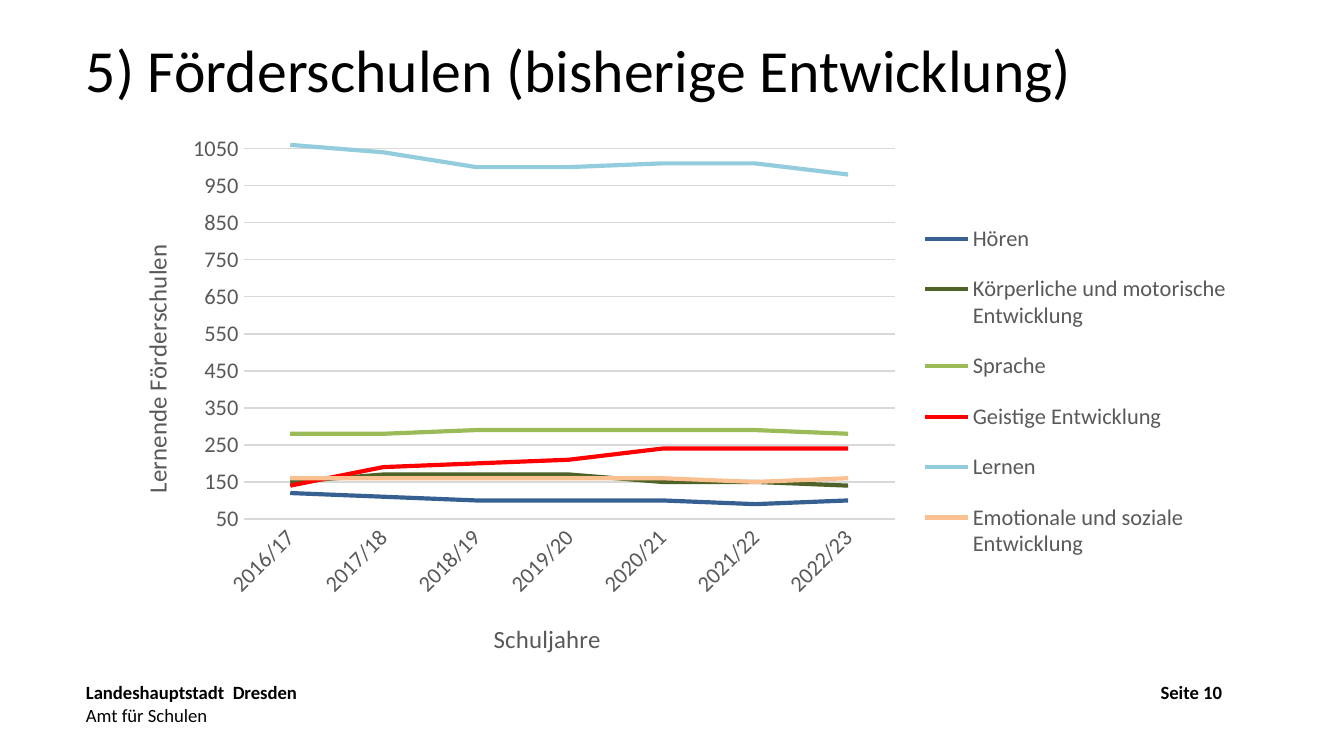
from lxml.etree import SubElement
from pptx import Presentation
from pptx.chart.data import CategoryChartData
from pptx.dml.color import RGBColor
from pptx.enum.chart import XL_CHART_TYPE as ChartType, XL_LEGEND_POSITION as LegendSide
from pptx.enum.chart import XL_MARKER_STYLE as Marker, XL_TICK_MARK as Tick
from pptx.enum.text import MSO_ANCHOR as Anchor
from pptx.oxml.ns import qn
from pptx.util import Emu, Pt

COLORS = {
    "black": "000000", "label": "595959", "grid": "D9D9D9", "blue": "376092", "olive": "4F6228",
    "green": "9BBB59", "red": "FF0000", "sky": "93CDDD", "peach": "FAC090",
}
YEARS = [f"{year}/{year % 100 + 1}" for year in range(2016, 2023)]
SERIES = [
    ("Hören", "blue", (120, 110, 100, 100, 100, 90, 100)),
    ("Körperliche und motorische Entwicklung", "olive", (150, 170, 170, 170, 150, 150, 140)),
    ("Sprache", "green", (280, 280, 290, 290, 290, 290, 280)),
    ("Geistige Entwicklung", "red", (140, 190, 200, 210, 240, 240, 240)),
    ("Lernen", "sky", (1060, 1040, 1000, 1000, 1010, 1010, 980)),
    ("Emotionale und soziale Entwicklung", "peach", (160, 160, 160, 160, 160, 150, 160)),
]
CHART_AREA = (101, 124, 1142, 552)


def px(length):
    return Emu(round(length * 914400 / 134.4))


def color(name):
    return RGBColor.from_string(COLORS[name])


def style_font(font, size=12, tint="label", bold=False):
    font.name, font.size, font.bold = "Calibri", Pt(size), bold
    font.color.rgb = color(tint)


def write(para, text, **style):
    span = para.add_run()
    span.text = text
    style_font(span.font, **style)


def style_line(line, tint, width):
    line.color.rgb = color(tint)
    line.width = Pt(width)


def place(part, index, left, top, size=None, inner=False):
    for old in part.findall(qn("c:layout")):
        part.remove(old)
    layout = part.makeelement(qn("c:layout"))
    part.insert(index, layout)
    manual = SubElement(layout, qn("c:manualLayout"))
    area_left, area_top, area_width, area_height = CHART_AREA
    entries = [("layoutTarget", "inner")] if inner else []
    entries += [("xMode", "edge"), ("yMode", "edge")]
    entries += [("x", (left - area_left) / area_width), ("y", (top - area_top) / area_height)]
    if size:
        entries += [("w", size[0] / area_width), ("h", size[1] / area_height)]
    for tag, value in entries:
        text = value if isinstance(value, str) else f"{value:.3f}"
        SubElement(manual, qn(f"c:{tag}")).set("val", text)


class SlideBuilder:
    """Holds the style and the current slide and adds its elements."""

    def __init__(self, deck):
        self.page = deck.slides.add_slide(deck.slide_layouts[6])

    def text_box(self, area, lines, top=5, bottom=7, anchor=Anchor.TOP, tab=None):
        box = self.page.shapes.add_textbox(*map(px, area))
        frame = box.text_frame
        frame.word_wrap = True
        frame.vertical_anchor = anchor
        frame.margin_left = frame.margin_right = px(85)
        frame.margin_top, frame.margin_bottom = px(top), px(bottom)
        for index, (text, style) in enumerate(lines):
            para = frame.add_paragraph() if index else frame.paragraphs[0]
            write(para, text, tint="black", **style)
            if tab:
                stops = SubElement(para._p.get_or_add_pPr(), qn("a:tabLst"))
                SubElement(stops, qn("a:tab"), pos=str(px(tab)), algn="r")

    def axis(self, axis, title, left, top, title_turn, label_turn):
        axis.major_tick_mark = axis.minor_tick_mark = Tick.NONE
        style_font(axis.tick_labels.font)
        labels = axis._element.find(qn("c:txPr")).find(qn("a:bodyPr"))
        labels.set("rot", str(label_turn * 60000))
        frame = axis.axis_title.text_frame
        write(frame.paragraphs[0], title, size=13.3)
        body = frame._txBody.find(qn("a:bodyPr"))
        body.set("rot", str(title_turn * 60000))
        body.set("vert", "horz")
        place(axis._element.find(qn("c:title")), 1, left, top)

    def line_chart(self):
        data = CategoryChartData()
        data.categories = YEARS
        for name, _, values in SERIES:
            data.add_series(name, values)
        chart = self.page.shapes.add_chart(ChartType.LINE, *map(px, CHART_AREA), data).chart
        chart.has_title = False
        style_font(chart.font, size=10, tint="black")
        chart.plots[0].vary_by_categories = False
        for series, (_, tint, _) in zip(chart.plots[0].series, SERIES):
            series.smooth = False
            series.marker.style = Marker.NONE
            style_line(series.format.line, tint, 2.25)

        years, learners = chart.category_axis, chart.value_axis
        self.axis(years, "Schuljahre", 489, 617, 0, -45)
        self.axis(learners, "Lernende Förderschulen", 135, 240, -90, 0)
        style_line(years.format.line, "grid", 0.75)
        learners.format.line.fill.background()
        learners.minimum_scale, learners.maximum_scale = 50, 1060
        learners.major_unit = 100
        learners.has_major_gridlines = True
        style_line(learners.major_gridlines.format.line, "grid", 0.75)

        chart.has_legend = True
        legend = chart.legend
        legend.position = LegendSide.RIGHT
        legend.include_in_layout = False
        style_font(legend.font)
        place(legend._element, 1, 917, 202, (316, 380))
        plot_area = chart._chartSpace.find(qn("c:chart")).find(qn("c:plotArea"))
        place(plot_area, 0, 244, 145, (651, 374), inner=True)


def main():
    deck = Presentation()
    deck.slide_width, deck.slide_height = px(1344), px(756)
    builder = SlideBuilder(deck)
    builder.text_box((1, 28, 1347, 117), [("5) Förderschulen (bisherige Entwicklung)", {"size": 32})])
    builder.line_chart()
    footer = [
        ("Landeshauptstadt  Dresden\tSeite 10", {"size": 10, "bold": True}),
        ("Amt für Schulen", {"size": 10}),
    ]
    builder.text_box((1, 652, 1348, 106), footer, bottom=32, anchor=Anchor.BOTTOM, tab=1136)
    deck.save("out.pptx")


if __name__ == "__main__":
    main()
